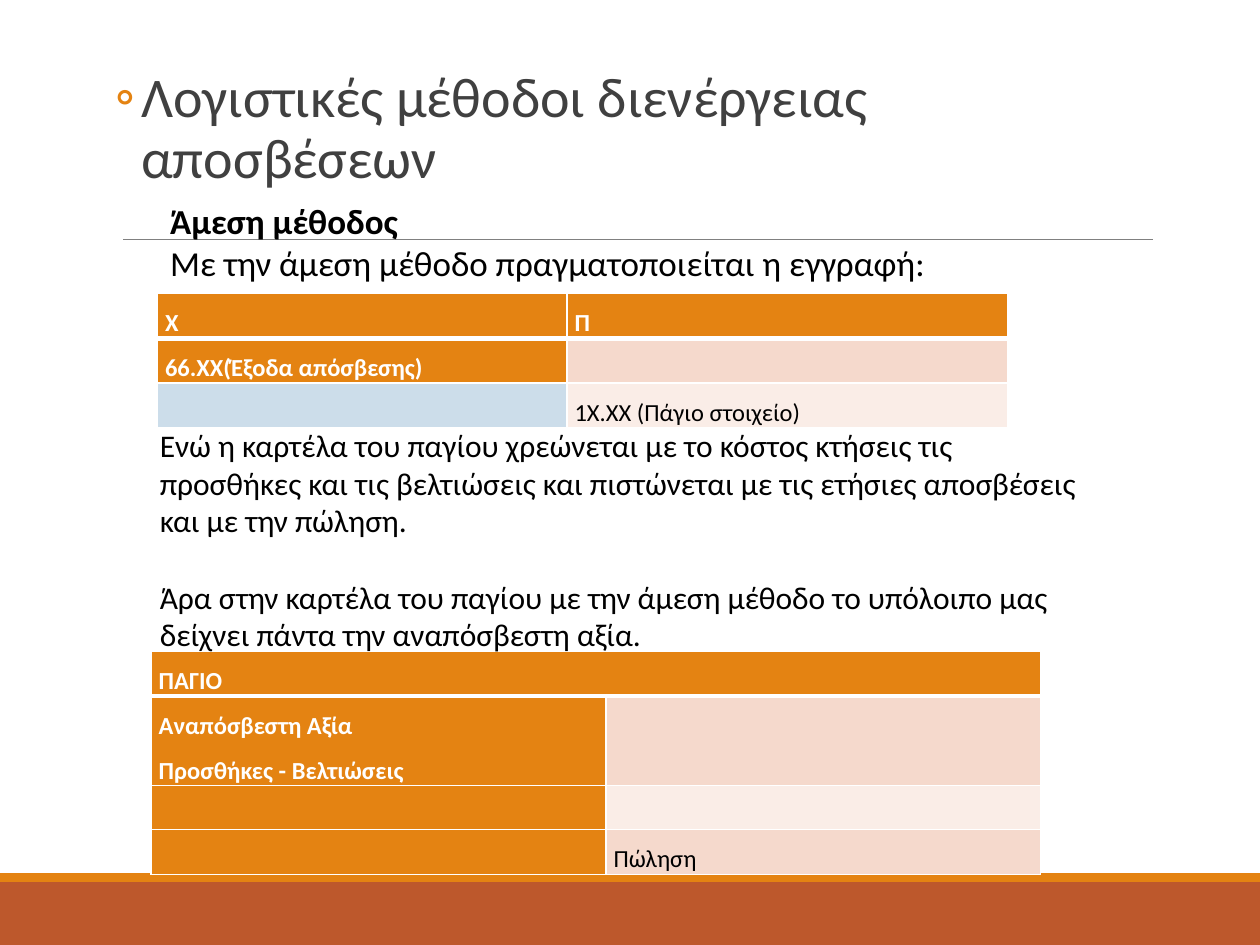
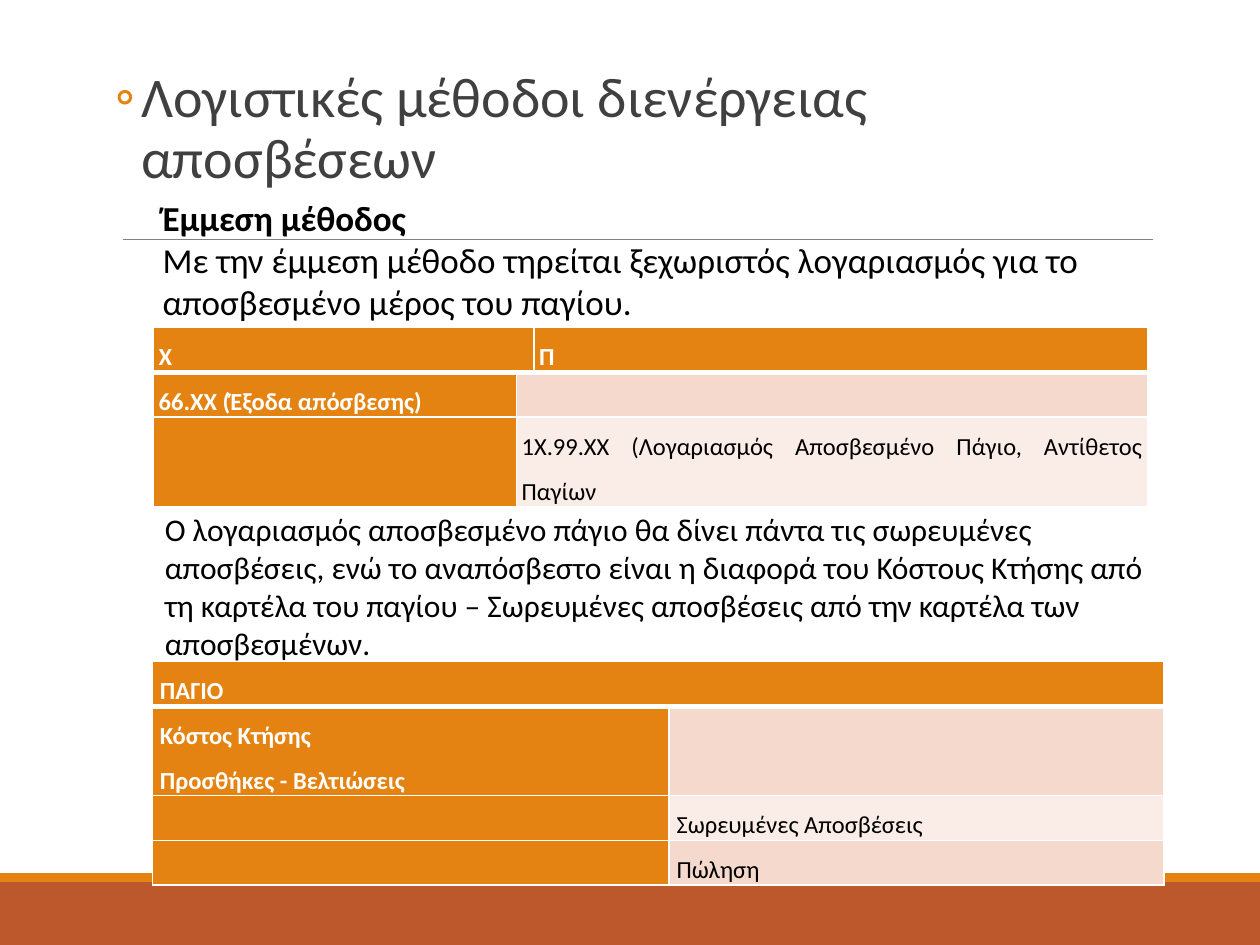
from lxml import etree
from pptx import Presentation
from pptx.dml.color import RGBColor
from pptx.enum.shapes import MSO_CONNECTOR, MSO_SHAPE
from pptx.enum.text import MSO_ANCHOR, MSO_AUTO_SIZE, PP_ALIGN
from pptx.oxml.ns import qn
from pptx.util import Inches, Pt

RECTANGLE = MSO_SHAPE.RECTANGLE
STRAIGHT = MSO_CONNECTOR.STRAIGHT
TOP, BOTTOM = MSO_ANCHOR.TOP, MSO_ANCHOR.BOTTOM
NO_AUTOFIT = MSO_AUTO_SIZE.NONE
LEFT, JUSTIFY = PP_ALIGN.LEFT, PP_ALIGN.JUSTIFY

FONT = "Calibri"
ORANGE, RUST, BLUE = "E48312", "BD582C", "CCDDEA"
DARK_BAND, LIGHT_BAND = "F5D9CC", "FAEDE7"
WHITE, BLACK, CHARCOAL, GREY = "FFFFFF", "000000", "404040", "808080"
HEADING = "Λογιστικές μέθοδοι διενέργειας αποσβέσεων"
ROW_HEIGHT = 0.35

METHODS = [
    {
        "intro_at": (0.75, 1.58, 8.61, 0.68),
        "intro": ["Άμεση μέθοδος", "Με την άμεση μέθοδο πραγματοποιείται η εγγραφή:"],
        "explanation_at": (1.17, 3.33, 7.67, 1.92),
        "explanation": [
            ("Ενώ η καρτέλα του παγίου χρεώνεται με το κόστος κτήσεις τις προσθήκες "
             "και τις βελτιώσεις και πιστώνεται με τις ετήσιες αποσβέσεις και με την πώληση.", 0),
            ("Άρα στην καρτέλα του παγίου με την άμεση μέθοδο το υπόλοιπο μας", 22),
            ("δείχνει πάντα την αναπόσβεστη αξία.", 0),
        ],
        "ledgers": [
            {
                "at": (1.25, 2.33), "columns": [3.25, 3.5], "lines": [1, 1, 1], "inset": 0.06,
                "entries": [["Χ", "Π"],
                            ["66.ΧΧ(Έξοδα απόσβεσης)", ""],
                            ["", "1Χ.ΧΧ (Πάγιο στοιχείο)"]],
                "merges": [], "accents": {(2, 0): BLUE},
            },
            {
                "at": (1.2, 5.17), "columns": [3.61, 3.45], "lines": [1, 2, 1, 1], "inset": 0.06,
                "entries": [["ΠΑΓΙΟ", ""],
                            ["Αναπόσβεστη Αξία\nΠροσθήκες - Βελτιώσεις", ""],
                            ["", ""],
                            ["", "Πώληση"]],
                "merges": [(0, 0, 1)], "accents": {},
            },
        ],
    },
    {
        "intro_at": (0.69, 1.56, 8.61, 1.02),
        "intro": ["Έμμεση μέθοδος",
                  "Με την έμμεση μέθοδο τηρείται ξεχωριστός λογαριασμός για το "
                  "αποσβεσμένο μέρος του παγίου."],
        "explanation_at": (1.21, 4, 8.03, 1.31),
        "explanation": [
            ("Ο λογαριασμός αποσβεσμένο πάγιο θα δίνει πάντα τις σωρευμένες αποσβέσεις, "
             "ενώ το αναπόσβεστο είναι η διαφορά του Κόστους Κτήσης από τη καρτέλα του "
             "παγίου – Σωρευμένες αποσβέσεις από την καρτέλα των αποσβεσμένων.", 0),
        ],
        "ledgers": [
            {
                "at": (1.22, 2.6), "columns": [2.88, 0.14, 4.87], "lines": [1, 1, 2], "inset": 0.04,
                "entries": [["Χ", "", "Π"],
                            ["66.ΧΧ (Έξοδα απόσβεσης)", "", ""],
                            ["", "1Χ.99.ΧΧ (Λογαριασμός Αποσβεσμένο Πάγιο, Αντίθετος Παγίων", ""]],
                "merges": [(0, 0, 1), (1, 1, 2), (2, 1, 2)], "accents": {},
            },
            {
                "at": (1.21, 5.25), "columns": [4.1, 3.93], "lines": [1, 2, 1, 1], "inset": 0.06,
                "entries": [["ΠΑΓΙΟ", ""],
                            ["Κόστος Κτήσης\nΠροσθήκες - Βελτιώσεις", ""],
                            ["", "Σωρευμένες Αποσβέσεις"],
                            ["", "Πώληση"]],
                "merges": [(0, 0, 1)], "accents": {},
            },
        ],
    },
]


def rgb(hex_color):
    return RGBColor.from_string(hex_color)


def write(frame, text, size=18, color=BLACK, bold=False, align=LEFT, spacing=1.0, before=0, after=0):
    paragraph = frame.paragraphs[0] if not frame.text else frame.add_paragraph()
    paragraph.alignment = align
    paragraph.line_spacing = spacing
    paragraph.space_before, paragraph.space_after = Pt(before), Pt(after)
    run = paragraph.add_run()
    run.text = text
    run.font.name, run.font.size, run.font.bold = FONT, Pt(size), bold
    run.font.color.rgb = rgb(color)
    return paragraph


prs = Presentation()
prs.slide_width, prs.slide_height = Inches(10), Inches(7.5)
layout = prs.slide_layouts[5]
slides = [prs.slides.add_slide(layout) for method in METHODS]

shared = []
for top, height, color in [(7, 0.5, RUST), (6.93, 0.07, ORANGE)]:
    band = slides[0].shapes.add_shape(RECTANGLE, 0, Inches(top), Inches(10), Inches(height))
    band.shadow.inherit = False
    band.fill.solid()
    band.fill.fore_color.rgb = rgb(color)
    band.line.fill.background()
    shared.append(band)
rule = slides[0].shapes.add_connector(STRAIGHT, Inches(0.98), Inches(1.9), Inches(9.15), Inches(1.9))
rule.line.color.rgb = rgb(GREY)
rule.line.width = Pt(0.5)
etree.SubElement(rule.element.spPr, qn("a:effectLst"))
shared.append(rule)
for number, part in enumerate(shared, 101):
    part.element.xpath(".//p:cNvPr")[0].set("id", str(number))
    layout.shapes.element.append(part.element)

for slide, method in zip(slides, METHODS):
    title = slide.shapes.title
    title.left, title.top, title.width, title.height = map(Inches, (0.5, 0.5, 8.75, 0.92))
    frame = title.text_frame
    frame.auto_size, frame.vertical_anchor, frame.word_wrap = NO_AUTOFIT, TOP, True
    frame.margin_left = frame.margin_right = 0
    frame.margin_top = frame.margin_bottom = Inches(0.05)
    heading = write(frame, HEADING, size=32, color=CHARCOAL, spacing=0.9, before=2, after=4)
    properties = heading._p.get_or_add_pPr()
    properties.set("marL", str(Inches(0.62)))
    properties.set("indent", str(Inches(-0.2)))
    bullet_color = etree.SubElement(properties, qn("a:buClr"))
    etree.SubElement(bullet_color, qn("a:srgbClr"), val=ORANGE)
    etree.SubElement(properties, qn("a:buFont"), typeface=FONT)
    etree.SubElement(properties, qn("a:buChar"), char="◦")

    for ledger in method["ledgers"]:
        entries, columns = ledger["entries"], ledger["columns"]
        left, top = ledger["at"]
        table = slide.shapes.add_table(
            len(entries), len(columns), Inches(left), Inches(top),
            Inches(sum(columns)), Inches(ROW_HEIGHT * sum(ledger["lines"]))).table
        for column, width in zip(table.columns, columns):
            column.width = Inches(width)
        for row, lines in zip(table.rows, ledger["lines"]):
            row.height = Inches(ROW_HEIGHT * lines)
        for r, first, last in ledger["merges"]:
            table.cell(r, first).merge(table.cell(r, last))
        for r, entry_row in enumerate(entries):
            for c, entry in enumerate(entry_row):
                cell = table.cell(r, c)
                label = r == 0 or c == 0
                band_color = DARK_BAND if r % 2 else LIGHT_BAND
                cell.fill.solid()
                cell.fill.fore_color.rgb = rgb(
                    ledger["accents"].get((r, c), ORANGE if label else band_color))
                cell.margin_left = cell.margin_right = Inches(ledger["inset"])
                cell.margin_top = cell.margin_bottom = 0
                cell.vertical_anchor = BOTTOM
                for position, side in enumerate(("lnL", "lnR", "lnT", "lnB")):
                    heavy = (r == 0 and side == "lnB") or (r == 1 and side == "lnT")
                    border = etree.Element(qn("a:" + side), w=str(Pt(3 if heavy else 1)))
                    border_fill = etree.SubElement(border, qn("a:solidFill"))
                    etree.SubElement(border_fill, qn("a:srgbClr"), val=WHITE)
                    cell._tc.get_or_add_tcPr().insert(position, border)
                if entry:
                    for line in entry.split("\n"):
                        write(cell.text_frame, line, size=14, color=WHITE if label else BLACK,
                              bold=label, align=JUSTIFY, spacing=1.5)

    intro = slide.shapes.add_textbox(*map(Inches, method["intro_at"])).text_frame
    intro.word_wrap = True
    intro.margin_left = Inches(0.6)
    intro.margin_top = intro.margin_right = intro.margin_bottom = 0
    for index, line in enumerate(method["intro"]):
        write(intro, line, size=20, bold=index == 0)

    explanation = slide.shapes.add_textbox(*map(Inches, method["explanation_at"])).text_frame
    explanation.word_wrap = True
    for line, gap in method["explanation"]:
        write(explanation, line, before=gap)

prs.save("out.pptx")
